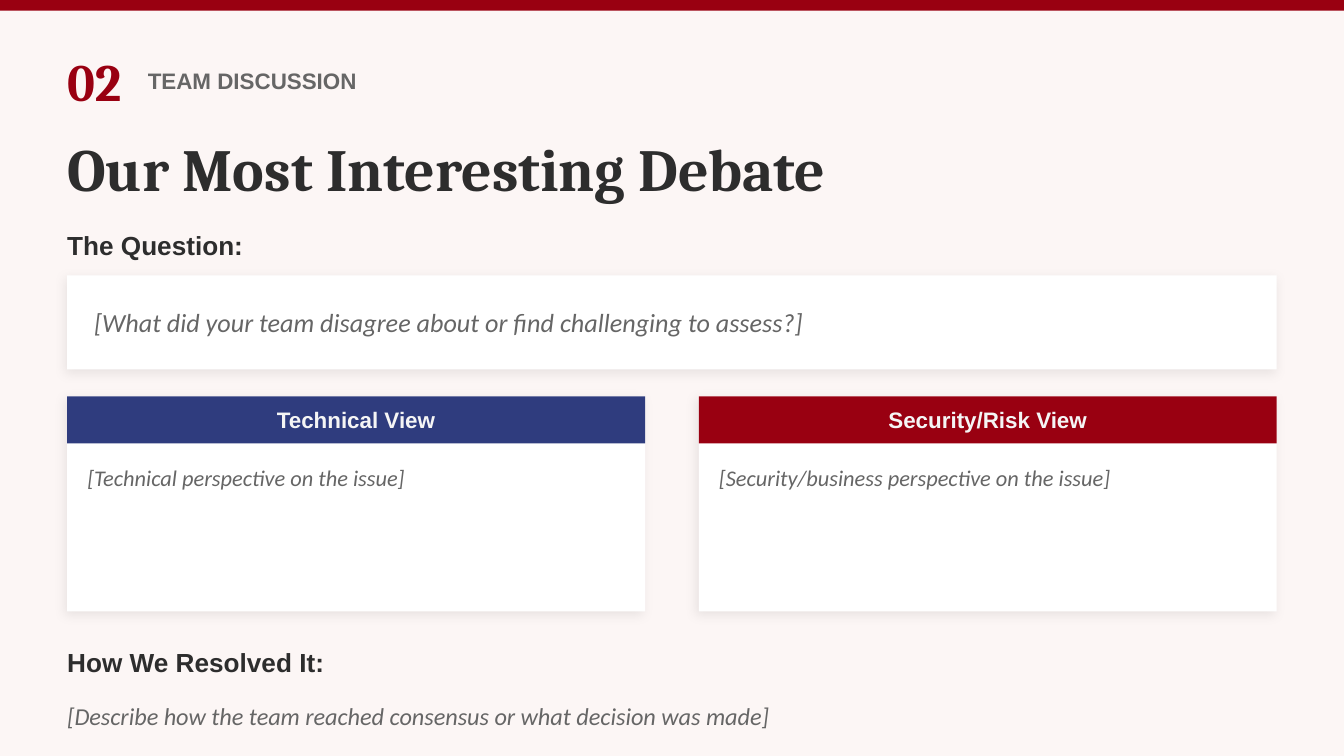
from dataclasses import dataclass

from lxml import etree
from pptx import Presentation
from pptx.dml.color import RGBColor
from pptx.enum.shapes import MSO_SHAPE
from pptx.enum.text import MSO_ANCHOR, MSO_AUTO_SIZE, PP_ALIGN
from pptx.oxml.ns import qn
from pptx.shapes.autoshape import Shape
from pptx.slide import Slide
from pptx.util import Pt

RECTANGLE = MSO_SHAPE.RECTANGLE
TOP, MIDDLE = MSO_ANCHOR.TOP, MSO_ANCHOR.MIDDLE
LEFT, CENTER = PP_ALIGN.LEFT, PP_ALIGN.CENTER
NO_AUTOSIZE = MSO_AUTO_SIZE.NONE

COLORS = {
    "background": "FCF6F5",
    "red": "990011",
    "navy": "2F3C7E",
    "ink": "2D2D2D",
    "grey": "666666",
    "card": "FFFFFF",
    "pale": "F5F5F5",
    "shadow": "000000",
}

STYLES = {
    "number": ("red", {"name": "Cambria", "size": Pt(28), "bold": True}),
    "section": ("grey", {"name": "Arial", "size": Pt(12), "bold": True}),
    "title": ("ink", {"name": "Cambria", "size": Pt(32), "bold": True}),
    "heading": ("ink", {"name": "Arial", "size": Pt(14), "bold": True}),
    "view": ("pale", {"name": "Arial", "size": Pt(12), "bold": True}),
    "question": ("grey", {"name": "Calibri", "size": Pt(14), "italic": True}),
    "resolution": ("grey", {"name": "Calibri", "size": Pt(13), "italic": True}),
    "perspective": ("grey", {"name": "Calibri", "size": Pt(12), "italic": True}),
}

PAGE_WIDTH, PAGE_HEIGHT = 720, 405
MARGIN = 36
CONTENT_WIDTH = PAGE_WIDTH - 2 * MARGIN
COLUMN_GAP = 28.8
COLUMN_WIDTH = (CONTENT_WIDTH - COLUMN_GAP) / 2
VIEW_TOP, VIEW_HEIGHT, HEADER_HEIGHT = 212.4, 115.2, 25.2
VIEW_PADDING = 10.8


@dataclass(frozen=True)
class Area:
    left: float
    top: float
    width: float
    height: float


@dataclass(frozen=True)
class Label:
    text: str
    style: str
    area: Area
    align: PP_ALIGN = LEFT
    anchor: MSO_ANCHOR = MIDDLE


@dataclass(frozen=True)
class View:
    name: str
    color: str
    perspective: str


QUESTION_AREA = Area(MARGIN, 147.6, CONTENT_WIDTH, 50.4)
TITLE = Label("Our Most Interesting Debate", "title",
              Area(MARGIN, 68.4, CONTENT_WIDTH, 43.2))
LABELS = [
    Label("02", "number", Area(MARGIN, 25.2, 43.2, 36)),
    Label("TEAM DISCUSSION", "section", Area(79.2, 28.8, 288, 28.8)),
    Label("The Question:", "heading", Area(MARGIN, 118.8, 144, 25.2)),
    Label("[What did your team disagree about or find challenging to assess?]",
          "question", Area(50.4, 147.6, CONTENT_WIDTH - 28.8, 50.4)),
    Label("How We Resolved It:", "heading", Area(MARGIN, 342, 288, 25.2)),
    Label("[Describe how the team reached consensus or what decision was made]",
          "resolution", Area(MARGIN, 367.2, CONTENT_WIDTH, 32.4)),
]
VIEWS = [
    View("Technical View", "navy", "[Technical perspective on the issue]"),
    View("Security/Risk View", "red",
         "[Security/business perspective on the issue]"),
]


def color_of(name: str) -> RGBColor:
    return RGBColor.from_string(COLORS[name])


def position(area: Area) -> list[Pt]:
    return [Pt(area.left), Pt(area.top), Pt(area.width), Pt(area.height)]


def write_label(box: Shape, label: Label) -> None:
    frame = box.text_frame
    frame_format = {
        "margin_left": 0, "margin_top": 0, "margin_right": 0, "margin_bottom": 0,
        "word_wrap": True, "auto_size": NO_AUTOSIZE,
        "vertical_anchor": label.anchor,
    }
    for name, value in frame_format.items():
        setattr(frame, name, value)
    para = frame.paragraphs[0]
    para.alignment = label.align
    span = para.add_run()
    span.text = label.text
    color, font_format = STYLES[label.style]
    for name, value in font_format.items():
        setattr(span.font, name, value)
    span.font.color.rgb = color_of(color)


def add_label(page: Slide, label: Label) -> None:
    write_label(page.shapes.add_textbox(*position(label.area)), label)


def add_title(page: Slide, label: Label) -> None:
    box = page.shapes.title
    box.left, box.top, box.width, box.height = position(label.area)
    write_label(box, label)


def add_panel(page: Slide, area: Area, color: str) -> Shape:
    box = page.shapes.add_shape(RECTANGLE, *position(area))
    box.shadow.inherit = False
    box.fill.solid()
    box.fill.fore_color.rgb = color_of(color)
    box.line.fill.background()
    return box


def add_card(page: Slide, area: Area) -> None:
    box = add_panel(page, area, "card")
    effects = box.element.spPr.find(qn("a:effectLst"))
    shadow = etree.SubElement(
        effects, qn("a:outerShdw"), blurRad=str(Pt(6)), dist=str(Pt(2)),
        dir=str(135 * 60000), algn="bl", rotWithShape="0")
    color = etree.SubElement(shadow, qn("a:srgbClr"), val=COLORS["shadow"])
    etree.SubElement(color, qn("a:alpha"), val="8000")


def add_view(page: Slide, view: View, left: float) -> None:
    header = Area(left, VIEW_TOP, COLUMN_WIDTH, HEADER_HEIGHT)
    body = Area(left + VIEW_PADDING, VIEW_TOP + MARGIN,
                COLUMN_WIDTH - 2 * VIEW_PADDING, 68.4)
    add_card(page, Area(left, VIEW_TOP, COLUMN_WIDTH, VIEW_HEIGHT))
    add_panel(page, header, view.color)
    add_label(page, Label(view.name, "view", header, align=CENTER))
    add_label(page, Label(view.perspective, "perspective", body, anchor=TOP))


def main() -> None:
    deck = Presentation()
    deck.slide_width, deck.slide_height = Pt(PAGE_WIDTH), Pt(PAGE_HEIGHT)
    page = deck.slides.add_slide(deck.slide_layouts.get_by_name("Title Only"))
    page.background.fill.solid()
    page.background.fill.fore_color.rgb = color_of("background")
    add_panel(page, Area(0, 0, PAGE_WIDTH, 5.76), "red")
    add_title(page, TITLE)
    add_card(page, QUESTION_AREA)
    for column, view in enumerate(VIEWS):
        add_view(page, view, MARGIN + column * (COLUMN_WIDTH + COLUMN_GAP))
    for label in LABELS:
        add_label(page, label)
    deck.save("out.pptx")


if __name__ == "__main__":
    main()
